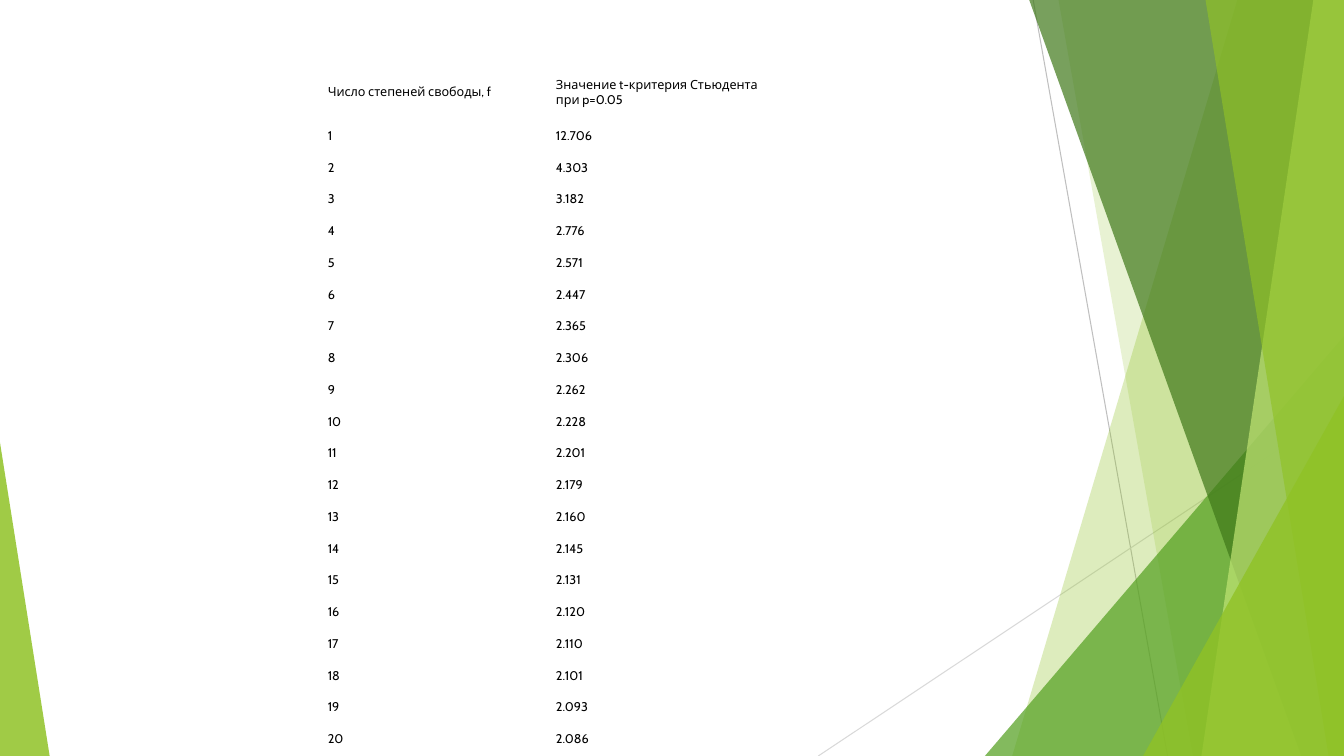
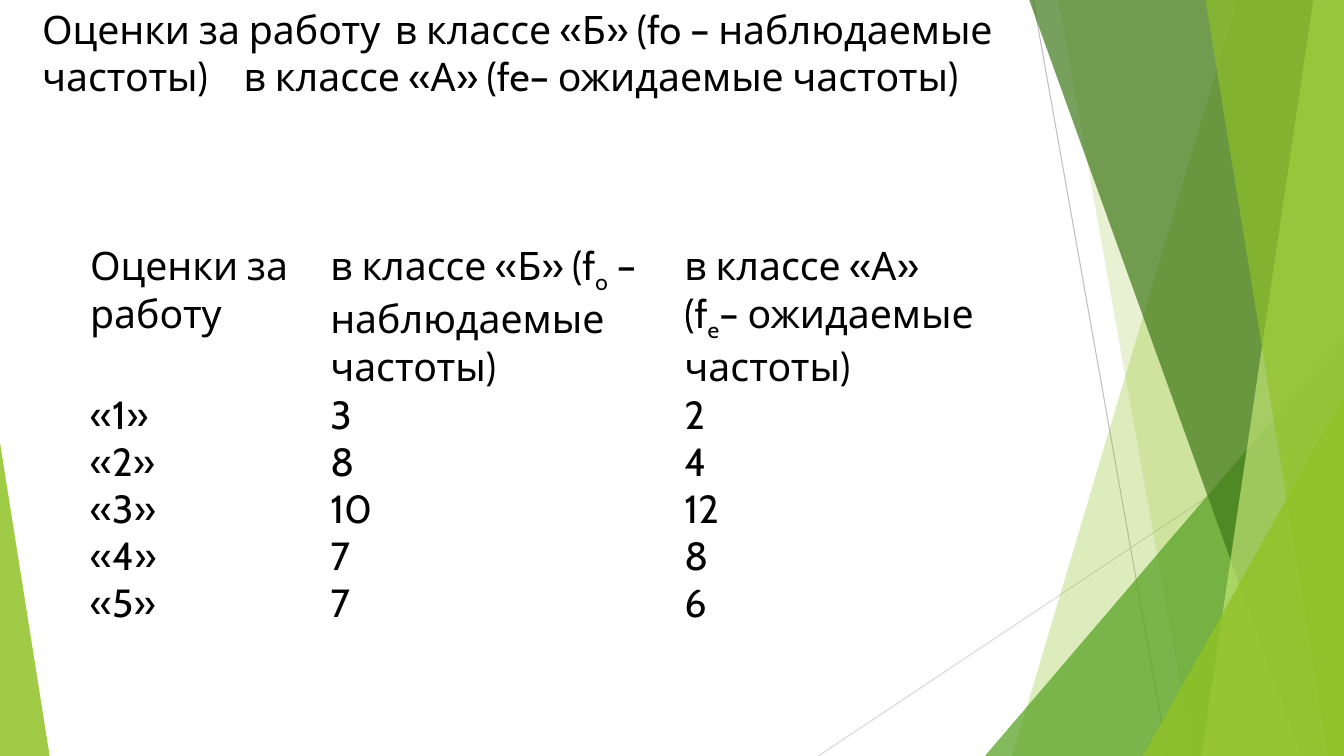
from lxml.etree import SubElement
from pptx import Presentation
from pptx.dml.color import RGBColor
from pptx.enum.shapes import MSO_CONNECTOR, MSO_SHAPE
from pptx.enum.text import MSO_ANCHOR
from pptx.oxml.ns import qn
from pptx.util import Pt

WIDTH, HEIGHT = 960, 540
BAND_TOP = -0.6
FONT = "Cabin"
BLACK = "000000"
LIME, GREEN, DARK_GREEN, PALE_LIME = "90C226", "54A021", "3F7819", "C0E474"

# Decoration: from, to, colour
THIN_LINES = [
    ((738, 0), (834, HEIGHT), "BFBFBF"),
    ((WIDTH, 290), (584.5, HEIGHT), "D9D9D9"),
]
# Right-hand pieces, back to front.
# A band has its left edge at the top and at the bottom; a triangle its frame.
RIGHT_PIECES = [
    ("band", (884, 723), LIME, 30),
    ("band", (756, 852), LIME, 20),
    ("triangle", (703.5, 240, 256.5, 300), GREEN, 72),
    ("band", (735, 929.5), DARK_GREEN, 70),
    ("band", (938.2, 858.2), PALE_LIME, 70),
    ("band", (861, 949), LIME, 65),
    ("triangle", (816.5, 283, 143.5, 257), LIME, 80),
]

STUDENT_VALUES = [
    "12.706", "4.303", "3.182", "2.776", "2.571", "2.447", "2.365",
    "2.306", "2.262", "2.228", "2.201", "2.179", "2.160", "2.145",
    "2.131", "2.120", "2.110", "2.101", "2.093", "2.086",
]
STUDENT_ROWS = [
    ("Число степеней свободы, f", "Значение t-критерия Стьюдента при p=0.05"),
    *((str(freedom), value) for freedom, value in enumerate(STUDENT_VALUES, 1)),
]

GRADES_TITLE = ("Оценки за работу \tв классе «Б» (fo – наблюдаемые частоты) "
                "\tв классе «А» (fe– ожидаемые частоты)")
# A tuple holds plain text, subscript, plain text
GRADE_ROWS = [
    ("Оценки за работу",
     ("в классе «Б» (f", "o", " – наблюдаемые частоты)"),
     ("в классе «А» (f", "e", "– ожидаемые частоты)")),
    ("«1»", "3", "2"),
    ("«2»", "8", "4"),
    ("«3»", "10", "12"),
    ("«4»", "7", "8"),
    ("«5»", "7", "6"),
]


def color(hex_text):
    return RGBColor.from_string(hex_text)


def paint(shape, fill, opacity):
    """Flat, partly transparent fill without outline or shadow."""
    shape.shadow.inherit = False
    shape.line.fill.background()
    shape.fill.solid()
    shape.fill.fore_color.rgb = color(fill)
    tone = shape.fill._xPr.find(".//" + qn("a:srgbClr"))
    SubElement(tone, qn("a:alpha")).set("val", str(opacity * 1000))


def add_thin_line(page, start, end, stroke):
    ends = [Pt(value) for value in (*start, *end)]
    line = page.shapes.add_connector(MSO_CONNECTOR.STRAIGHT, *ends)
    line.line.color.rgb = color(stroke)
    line.line.width = Pt(0.75)
    SubElement(line._element.spPr, qn("a:effectLst"))


def add_band(page, edge, fill, opacity):
    """Band from a slanted left edge to the right side of the slide."""
    top_left, bottom_left = edge
    corners = [(WIDTH, BAND_TOP), (WIDTH, HEIGHT), (bottom_left, HEIGHT)]
    outline = page.shapes.build_freeform(Pt(top_left), Pt(BAND_TOP))
    outline.add_line_segments([(Pt(x), Pt(y)) for x, y in corners], close=True)
    paint(outline.convert_to_shape(), fill, opacity)


def add_triangle(page, frame, fill, opacity, apex=1):
    shape = page.shapes.add_shape(MSO_SHAPE.ISOSCELES_TRIANGLE, *map(Pt, frame))
    shape.adjustments[0] = apex
    paint(shape, fill, opacity)


def add_decoration(page):
    for start, end, stroke in THIN_LINES:
        add_thin_line(page, start, end, stroke)
    draw = {"band": add_band, "triangle": add_triangle}
    for kind, geometry, fill, opacity in RIGHT_PIECES:
        draw[kind](page, geometry, fill, opacity)
    add_triangle(page, (0, 316, 35.5, 224), LIME, 85, apex=0)


def add_span(para, text, size, subscript=False):
    span = para.add_run()
    span.text = text
    span.font.name = FONT
    span.font.size = Pt(size)
    span.font.color.rgb = color(BLACK)
    if subscript:
        span._r.get_or_add_rPr().set("baseline", "-25000")


def add_title(page, text, frame, size):
    box = page.shapes.add_textbox(*map(Pt, frame))
    box.text_frame.word_wrap = True
    add_span(box.text_frame.paragraphs[0], text, size)


def fill_cell(cell, content, size, anchor, margins):
    cell.fill.background()
    cell.vertical_anchor = anchor
    cell.margin_left = cell.margin_right = Pt(margins[0])
    cell.margin_top = cell.margin_bottom = Pt(margins[1])
    parts = (content,) if isinstance(content, str) else content
    for index, part in enumerate(parts):
        add_span(cell.text_frame.paragraphs[0], part, size, subscript=index == 1)


def add_plain_table(page, rows, left, top, widths, header_height, row_height,
                    size, anchor=MSO_ANCHOR.TOP, margins=(0, 0)):
    heights = [header_height] + [row_height] * (len(rows) - 1)
    table = page.shapes.add_table(
        len(rows), len(widths), Pt(left), Pt(top),
        Pt(sum(widths)), Pt(sum(heights))).table
    table.first_row = table.horz_banding = False
    for column, width in zip(table.columns, widths):
        column.width = Pt(width)
    for row, height, contents in zip(table.rows, heights, rows):
        row.height = Pt(height)
        for cell, content in zip(row.cells, contents):
            fill_cell(cell, content, size, anchor, margins)


def add_page(deck):
    page = deck.slides.add_slide(deck.slide_layouts[6])
    add_decoration(page)
    return page


def main():
    deck = Presentation()
    deck.slide_width, deck.slide_height = Pt(WIDTH), Pt(HEIGHT)

    # Critical values of Student's t
    page = add_page(deck)
    add_plain_table(page, STUDENT_ROWS, left=230.5, top=46, widths=(163, 163),
                    header_height=39.7, row_height=22.7, size=9,
                    anchor=MSO_ANCHOR.MIDDLE, margins=(3.6, 1.5))

    # Grades in two classes
    page = add_page(deck)
    add_title(page, GRADES_TITLE, (23, 0, 743, 143), size=28)
    add_plain_table(page, GRADE_ROWS, left=64.4, top=173.5,
                    widths=(171.5, 253, 212), header_height=106,
                    row_height=33.5, size=28)

    deck.save("out.pptx")


if __name__ == "__main__":
    main()
